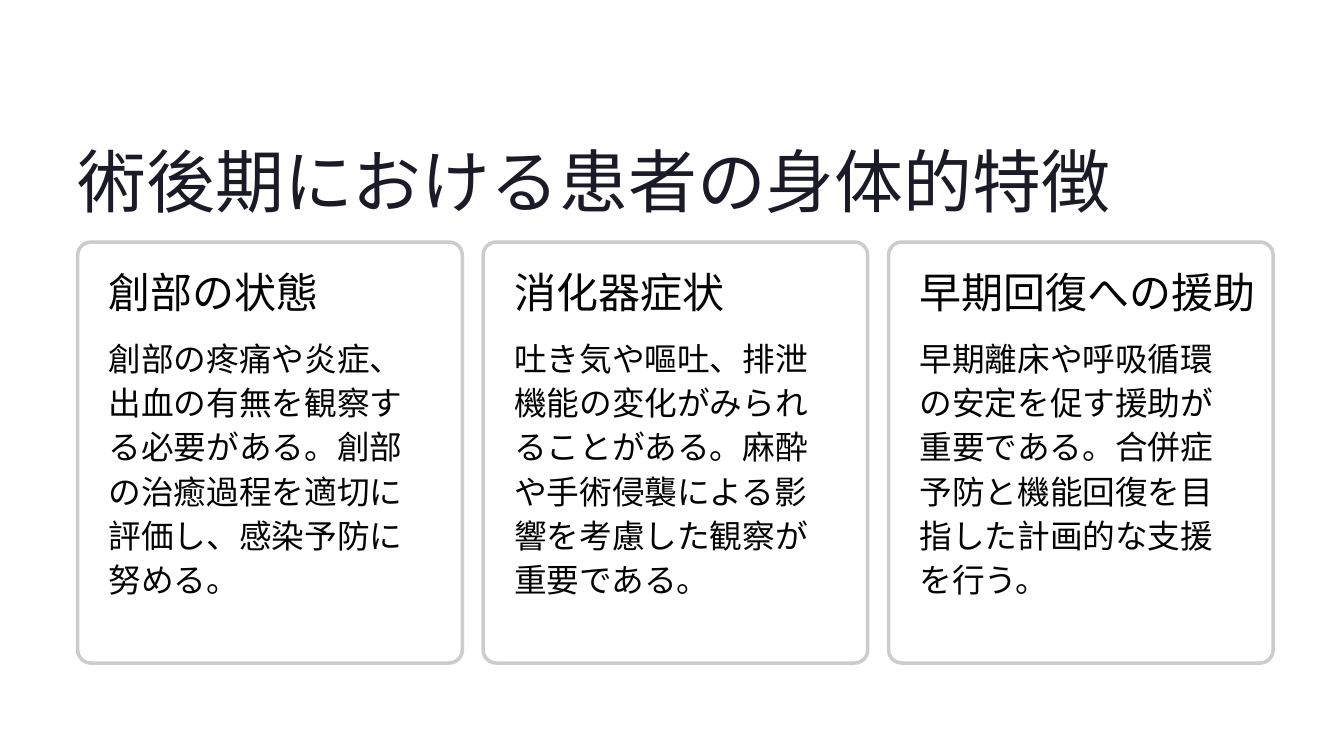
"""Builds a slide with three cards on the physical traits of patients after surgery."""
from pptx import Presentation
from pptx.dml.color import RGBColor as RGB
from pptx.enum.shapes import MSO_SHAPE as Shape
from pptx.oxml.ns import qn
from pptx.util import Cm, Pt
from lxml.etree import SubElement as Sub

COLORS = {"title": "1B1B27", "text": "030303", "card": "FFFFFF", "edge": "CCCCCC"}
STYLES = {
    "title": {"font": {"name": "Inter", "size": Pt(59)}, "lead": 74, "color": "title", "wrap": False},
    "head": {"font": {"name": "Inter", "size": Pt(36)}, "lead": 37, "color": "text", "wrap": False},
    "body": {"font": {"name": "Roboto", "size": Pt(28)}, "lead": 38, "color": "text", "wrap": True},
}
CARDS = [
    ("創部の状態",
     "創部の疼痛や炎症、出血の有無を観察する必要がある。創部の治癒過程を適切に評価し、感染予防に努める。"),
    ("消化器症状",
     "吐き気や嘔吐、排泄機能の変化がみられることがある。麻酔や手術侵襲による影響を考慮した観察が重要である。"),
    ("早期回復への援助",
     "早期離床や呼吸循環の安定を促す援助が重要である。合併症予防と機能回復を目指した計画的な支援を行う。"),
]
LEFT, PITCH, INSET = 2.35, 12.26, 0.94

deck = Presentation()
deck.slide_width, deck.slide_height = Cm(40.64), Cm(22.86)
slide = deck.slides.add_slide(deck.slide_layouts[6])


def add_text(text, kind, left, top, width, height):
    style = STYLES[kind]
    frame = slide.shapes.add_textbox(Cm(left), Cm(top), Cm(width), Cm(height)).text_frame
    frame.word_wrap = style["wrap"]
    for side in ("left", "top", "right", "bottom"):
        setattr(frame, f"margin_{side}", 0)
    para = frame.paragraphs[0]
    para.line_spacing = Pt(style["lead"])
    run = para.add_run()
    run.text = text
    for key, value in style["font"].items():
        setattr(run.font, key, value)
    run.font.color.rgb = RGB.from_string(COLORS[style["color"]])


add_text("術後期における患者の身体的特徴", "title", LEFT, 4.08, 31.47, 2.62)

for i, (head, body) in enumerate(CARDS):
    left = LEFT + i * PITCH
    card = slide.shapes.add_shape(Shape.ROUNDED_RECTANGLE, Cm(left), Cm(7.32), Cm(11.63), Cm(12.73))
    card.adjustments[0] = 0.034
    card.shadow.inherit = False
    card.fill.solid()
    card.fill.fore_color.rgb = RGB.from_string(COLORS["card"])
    tint = card.fill._xPr.find(qn("a:solidFill"))[0]
    Sub(tint, qn("a:alpha"), val="95000")
    card.line.color.rgb = RGB.from_string(COLORS["edge"])
    card.line.width = Pt(3)
    add_text(head, "head", left + INSET, 8.27, 10.5, 1.6)
    add_text(body, "body", left + INSET, 10.08, 9.7, 8.2)

deck.save("out.pptx")
